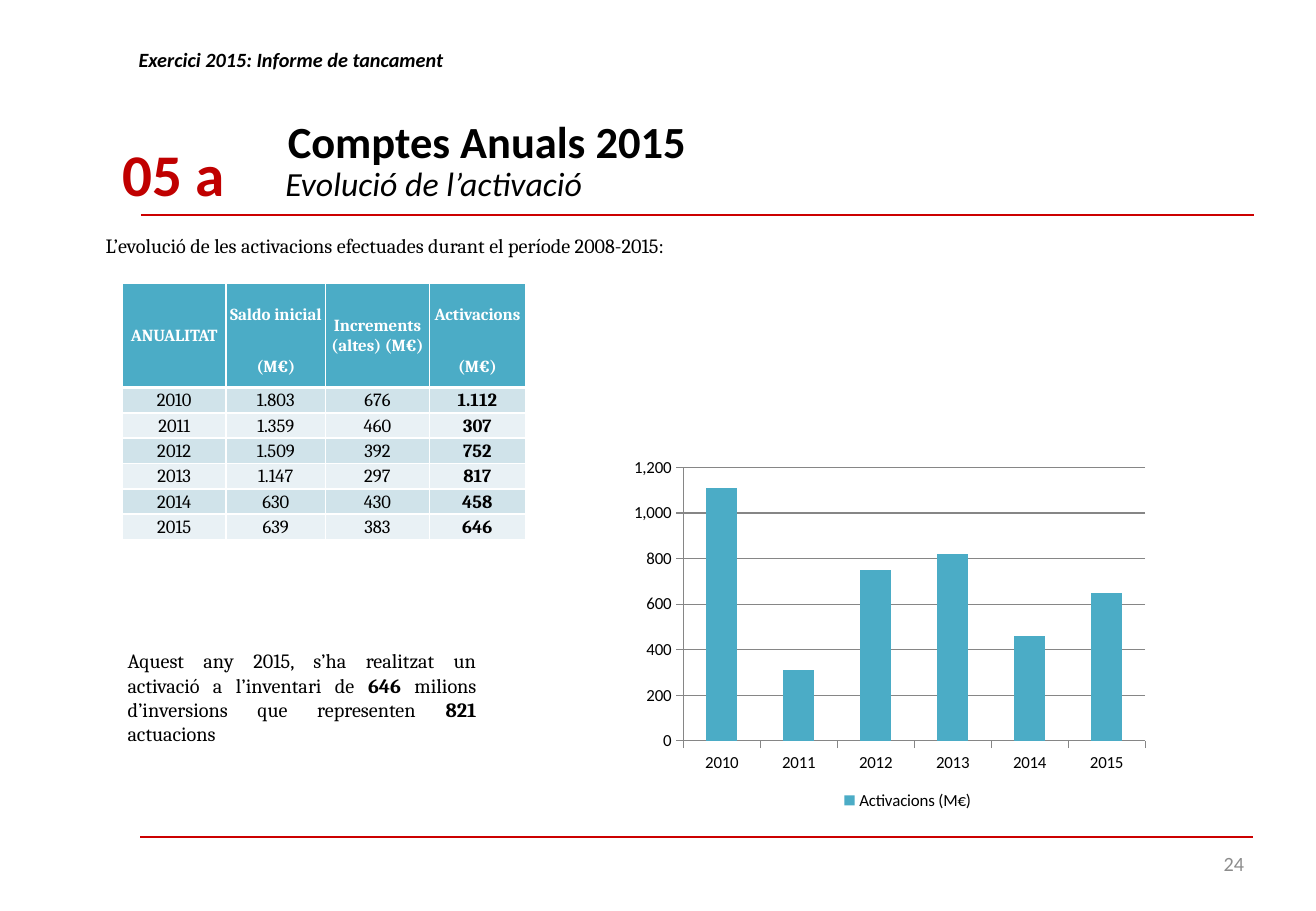
from dataclasses import dataclass

from lxml.etree import SubElement
from pptx import Presentation
from pptx.chart.data import CategoryChartData
from pptx.dml.color import RGBColor
from pptx.enum.chart import XL_CHART_TYPE as ChartType, XL_LEGEND_POSITION as Legend
from pptx.enum.chart import XL_TICK_MARK as Tick
from pptx.enum.shapes import MSO_CONNECTOR as Connector
from pptx.enum.text import MSO_ANCHOR as Anchor, PP_ALIGN as Align
from pptx.oxml import parse_xml
from pptx.oxml.ns import nsdecls, qn
from pptx.util import Pt


@dataclass(frozen=True)
class Theme:
    sans: str = "Calibri"
    serif: str = "Cambria"
    black: str = "000000"
    white: str = "FFFFFF"
    grey: str = "8C8C8C"
    grid: str = "868686"
    rule: str = "CC0000"
    accent: str = "C00000"
    teal: str = "4BACC6"
    bands: tuple = ("D0E3EA", "E9F1F5")
    section: float = 35
    title: float = 26.4
    subtitle: float = 20
    body: float = 12
    cell: float = 11
    small: float = 10


def rgb(value):
    return RGBColor.from_string(value)


class SlideBuilder:
    def __init__(self, slide, theme):
        self.slide = slide
        self.theme = theme

    def add_run(self, paragraph, text, size, color, font, bold=False, italic=False):
        run = paragraph.add_run()
        run.text = text
        run.font.name = font
        run.font.size = Pt(size)
        run.font.bold = bold
        run.font.italic = italic
        run.font.color.rgb = rgb(color)

    def text(self, box, runs, size, font=None, color=None, italic=False,
             align=Align.LEFT, anchor=Anchor.TOP):
        """Runs are (text, bold) pairs in a single paragraph."""
        frame = self.slide.shapes.add_textbox(*map(Pt, box)).text_frame
        frame.word_wrap = True
        frame.vertical_anchor = anchor
        paragraph = frame.paragraphs[0]
        paragraph.alignment = align
        for words, bold in runs:
            self.add_run(paragraph, words, size, color or self.theme.black,
                         font or self.theme.sans, bold, italic)

    def rule(self, left, top, width):
        line = self.slide.shapes.add_connector(
            Connector.STRAIGHT, Pt(left), Pt(top), Pt(left + width), Pt(top))
        line.line.color.rgb = rgb(self.theme.rule)
        line.line.width = Pt(1)
        SubElement(line._element.spPr, qn("a:effectLst"))

    def border(self, cell, side, width):
        """A width of zero hides the border."""
        paint = (f'<a:solidFill><a:srgbClr val="{self.theme.white}"/></a:solidFill>'
                 if width else "<a:noFill/>")
        cell._tc.get_or_add_tcPr().append(parse_xml(
            f'<a:ln{side} {nsdecls("a")} w="{Pt(width)}">{paint}</a:ln{side}>'))

    def cell(self, cell, text, size, color, fill, bold, top=1, bottom=1):
        for side, width in (("L", 1), ("R", 1), ("T", top), ("B", bottom)):
            self.border(cell, side, width)
        cell.fill.solid()
        cell.fill.fore_color.rgb = rgb(fill)
        cell.margin_left = cell.margin_right = cell.margin_top = Pt(0.7)
        cell.margin_bottom = 0
        cell.vertical_anchor = Anchor.MIDDLE
        paragraph = cell.text_frame.paragraphs[0]
        paragraph.alignment = Align.CENTER
        if text:
            self.add_run(paragraph, text, size, color, self.theme.serif, bold)

    def table(self, left, top, widths, heights, header, rows):
        """The header has two rows; a None below a heading merges the two cells."""
        theme = self.theme
        table = self.slide.shapes.add_table(
            len(heights), len(widths), Pt(left), Pt(top),
            Pt(sum(widths)), Pt(sum(heights))).table
        for column, width in zip(table.columns, widths):
            column.width = Pt(width)
        for row, height in zip(table.rows, heights):
            row.height = Pt(height)

        # Header
        for c, (upper, lower) in enumerate(zip(*header)):
            if lower is None:
                table.cell(0, c).merge(table.cell(1, c))
            self.cell(table.cell(0, c), upper, theme.small, theme.white, theme.teal,
                      True, bottom=0 if lower else 1.5)
            self.cell(table.cell(1, c), lower, theme.small, theme.white, theme.teal,
                      True, top=0, bottom=1.5)

        # Banded figures, last column in bold
        for r, row in enumerate(rows):
            for c, text in enumerate(row):
                self.cell(table.cell(r + 2, c), text, theme.cell, theme.black,
                          theme.bands[r % 2], c == len(row) - 1,
                          top=1 if r else 1.5)

    def column_chart(self, box, name, categories, values, top_value, step, plot):
        theme = self.theme
        data = CategoryChartData(number_format="#,##0")
        data.categories = categories
        data.add_series(name, values)
        chart = self.slide.shapes.add_chart(
            ChartType.COLUMN_CLUSTERED, *map(Pt, box), data).chart
        chart.font.name = theme.sans
        chart.font.size = Pt(theme.small)
        chart.font.color.rgb = rgb(theme.black)
        chart.has_title = False
        chart.has_legend = True
        chart.legend.position = Legend.BOTTOM
        chart.legend.include_in_layout = False

        columns = chart.plots[0]
        columns.gap_width = 150
        columns.vary_by_categories = False
        fill = columns.series[0].format.fill
        fill.solid()
        fill.fore_color.rgb = rgb(theme.teal)

        value_axis = chart.value_axis
        value_axis.minimum_scale = 0
        value_axis.maximum_scale = top_value
        value_axis.major_unit = step
        value_axis.has_major_gridlines = True
        for axis in (chart.category_axis, value_axis):
            axis.major_tick_mark = Tick.OUTSIDE
        for part in (chart.category_axis, value_axis, value_axis.major_gridlines):
            part.format.line.color.rgb = rgb(theme.grid)
            part.format.line.width = Pt(0.75)

        # Fixed inner plot area
        area = chart._chartSpace.chart.plotArea
        for old in area.findall(qn("c:layout")):
            area.remove(old)
        layout = parse_xml(f'<c:layout {nsdecls("c")}/>')
        manual = SubElement(layout, qn("c:manualLayout"))
        settings = [("layoutTarget", "inner"), ("xMode", "edge"), ("yMode", "edge")]
        for tag, value in settings + list(zip("xywh", plot)):
            SubElement(manual, qn(f"c:{tag}")).set("val", str(value))
        area.insert(0, layout)


def main():
    theme = Theme()
    presentation = Presentation()
    presentation.slide_width, presentation.slide_height = Pt(780), Pt(540)
    builder = SlideBuilder(
        presentation.slides.add_slide(presentation.slide_layouts[6]), theme)

    # Page frame
    builder.rule(83.5, 127.5, 659.5)
    builder.rule(83, 496, 659.5)
    builder.text((75, 24.5, 292, 21.6), [("Exercici 2015: Informe de tancament", True)],
                 theme.body, italic=True)
    builder.text((562.5, 497, 182, 29), [("24", False)], theme.body,
                 color=theme.grey, align=Align.RIGHT, anchor=Anchor.MIDDLE)

    # Headings
    builder.text((65.5, 78, 96.5, 50), [("05 a", True)], theme.section, color=theme.accent)
    builder.text((163.5, 66.5, 582.5, 34), [("Comptes Anuals 2015", True)], theme.title,
                 anchor=Anchor.MIDDLE)
    builder.text((162, 93, 582.5, 34), [("Evolució de l’activació", False)],
                 theme.subtitle, italic=True)

    # Introduction and conclusion
    builder.text(
        (55.5, 134.5, 613.5, 21.6),
        [("L’evolució de les activacions efectuades durant el període 2008-2015:", False)],
        theme.body, theme.serif, align=Align.JUSTIFY, anchor=Anchor.MIDDLE)
    builder.text(
        (68.5, 381, 221, 65.5),
        [("Aquest any 2015, s’ha realitzat un activació a l’inventari de", False),
         (" 646 ", True), ("milions d’inversions que representen ", False),
         ("821", True), (" actuacions", False)],
        theme.body, theme.serif, align=Align.JUSTIFY)

    # Activations by year
    rows = [("2010", "1.803", "676", "1.112"), ("2011", "1.359", "460", "307"),
            ("2012", "1.509", "392", "752"), ("2013", "1.147", "297", "817"),
            ("2014", "630", "430", "458"), ("2015", "639", "383", "646")]
    builder.column_chart(
        (342.5, 264, 391, 219), "Activacions (M€)", [row[0] for row in rows],
        (1110, 310, 750, 820, 460, 650), 1200, 200, (0.16, 0.06, 0.7, 0.74))
    builder.table(
        72.5, 168, (61.5, 59, 61.5, 57), (37, 24.5) + (15,) * len(rows),
        (("ANUALITAT", "Saldo inicial", "Increments (altes) (M€)", "Activacions"),
         (None, "(M€)", None, "(M€)")), rows)

    presentation.save("out.pptx")


if __name__ == "__main__":
    main()
